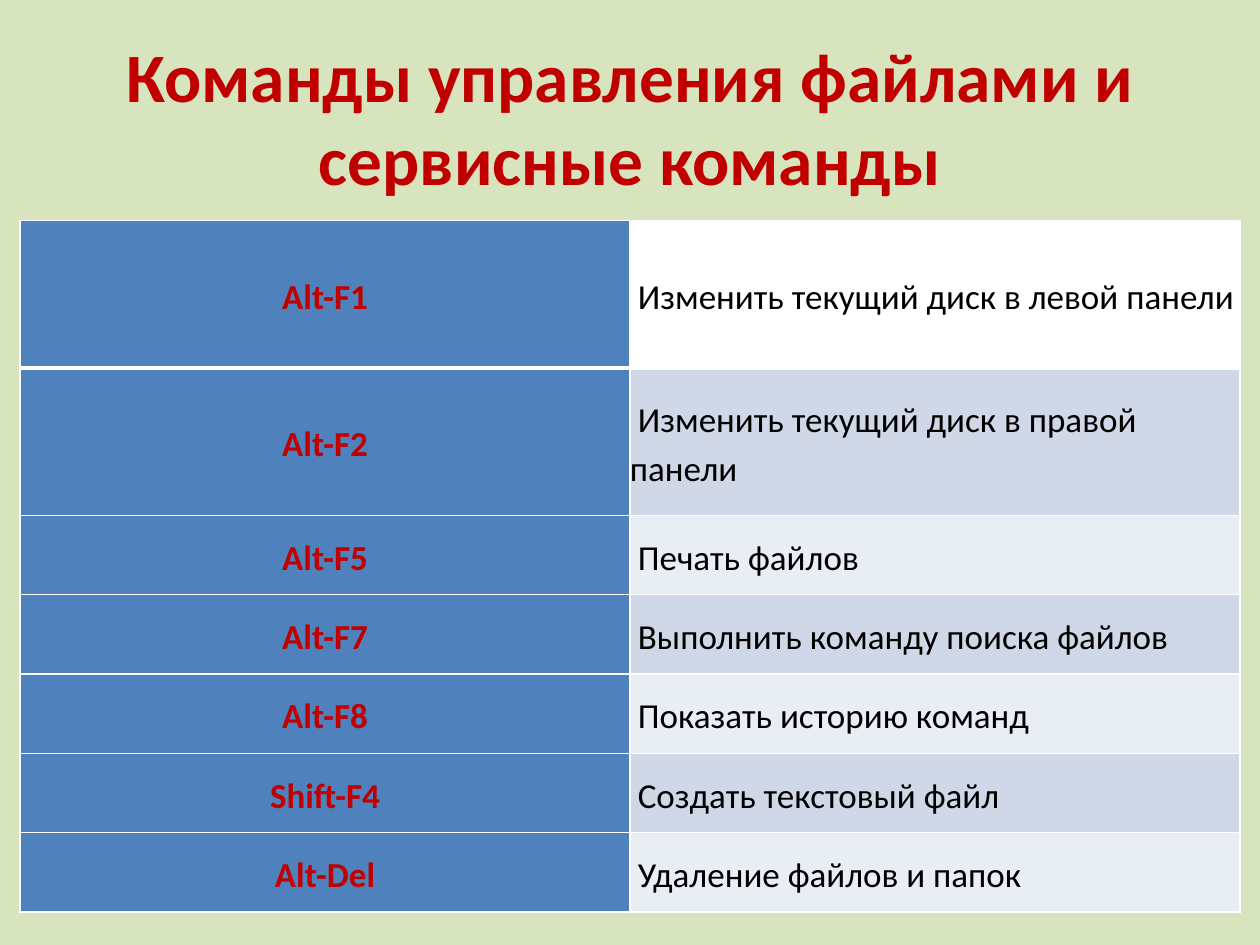
from lxml.etree import SubElement
from pptx import Presentation
from pptx.dml.color import RGBColor
from pptx.enum.text import MSO_ANCHOR as Anchor, PP_ALIGN as Align
from pptx.oxml.ns import qn
from pptx.util import Inches, Pt

RED = RGBColor(0xC0, 0x00, 0x00)
BLACK = RGBColor(0x00, 0x00, 0x00)
WHITE = RGBColor(0xFF, 0xFF, 0xFF)
GREEN = RGBColor(0xD7, 0xE4, 0xBD)
BLUE = RGBColor(0x4F, 0x81, 0xBD)
DARK_BAND = RGBColor(0xD0, 0xD8, 0xE8)
LIGHT_BAND = RGBColor(0xE9, 0xED, 0xF4)

TITLE = "Команды управления файлами и сервисные команды"
COMMANDS = [
    ("Alt-F1", " Изменить текущий диск в левой панели"),
    ("Alt-F2", " Изменить текущий диск в правой панели"),
    ("Alt-F5", " Печать файлов"),
    ("Alt-F7", " Выполнить команду поиска файлов"),
    ("Alt-F8", " Показать историю команд"),
    ("Shift-F4", " Создать текстовый файл"),
    ("Alt-Del", " Удаление файлов и папок"),
]
TALL_ROWS = 2
COLUMN_WIDTH = Inches(4.84)
KEY_STYLE = {"size": Pt(20), "bold": True}
ACTION_STYLE = {"size": Pt(20), "bold": False}
TITLE_STYLE = {"size": Pt(39.6), "bold": True}


def write_text(frame, text, style, color, align):
    para = frame.paragraphs[0]
    para.alignment = align
    span = para.add_run()
    span.text = text
    for name, value in {"name": "Calibri", **style}.items():
        setattr(span.font, name, value)
    span.font.color.rgb = color
    return para


def add_title(page):
    title = page.shapes.title
    place = {"left": 0.5, "top": 0.3, "width": 9, "height": 1.25}
    for name, value in place.items():
        setattr(title, name, Inches(value))
    title.text_frame.vertical_anchor = Anchor.MIDDLE
    write_text(title.text_frame, TITLE, TITLE_STYLE, RED, Align.CENTER)


def set_borders(cell, top, bottom):
    """Draw white borders; top and bottom widths are in points."""
    properties = cell._tc.get_or_add_tcPr()
    for side, width in {"L": 1, "R": 1, "T": top, "B": bottom}.items():
        line = SubElement(properties, qn(f"a:ln{side}"), w=str(Pt(width)))
        fill = SubElement(line, qn("a:solidFill"))
        SubElement(fill, qn("a:srgbClr"), val=str(WHITE))


def fill_cell(cell, text, style, color, align, background):
    for side in ("left", "right", "top", "bottom"):
        setattr(cell, f"margin_{side}", 0)
    cell.vertical_anchor = Anchor.MIDDLE
    cell.fill.solid()
    cell.fill.fore_color.rgb = background
    para = write_text(cell.text_frame, text, style, color, align)
    para.line_spacing = 1.15


def action_background(index):
    if index == 0:
        return WHITE
    return DARK_BAND if index % 2 else LIGHT_BAND


def add_command_table(page):
    frame = page.shapes.add_table(len(COMMANDS), 2, Inches(0.16), Inches(1.75),
                                  2 * COLUMN_WIDTH, Inches(5.52))
    table = frame.table
    for column in table.columns:
        column.width = COLUMN_WIDTH
    for index, (key, action) in enumerate(COMMANDS):
        table.rows[index].height = Inches(1.17 if index < TALL_ROWS else 0.63)
        key_cell, action_cell = table.rows[index].cells
        for cell in (key_cell, action_cell):
            set_borders(cell, 3 if index == 1 else 1, 3 if index == 0 else 1)
        fill_cell(key_cell, key, KEY_STYLE, RED, Align.CENTER, BLUE)
        fill_cell(action_cell, action, ACTION_STYLE, BLACK, Align.LEFT,
                  action_background(index))
    frame.height = Inches(5.52)


def main():
    deck = Presentation()
    deck.slide_width, deck.slide_height = Inches(10), Inches(7.5)
    page = deck.slides.add_slide(deck.slide_layouts[5])
    page.background.fill.solid()
    page.background.fill.fore_color.rgb = GREEN
    add_title(page)
    add_command_table(page)
    deck.save("out.pptx")


if __name__ == "__main__":
    main()
